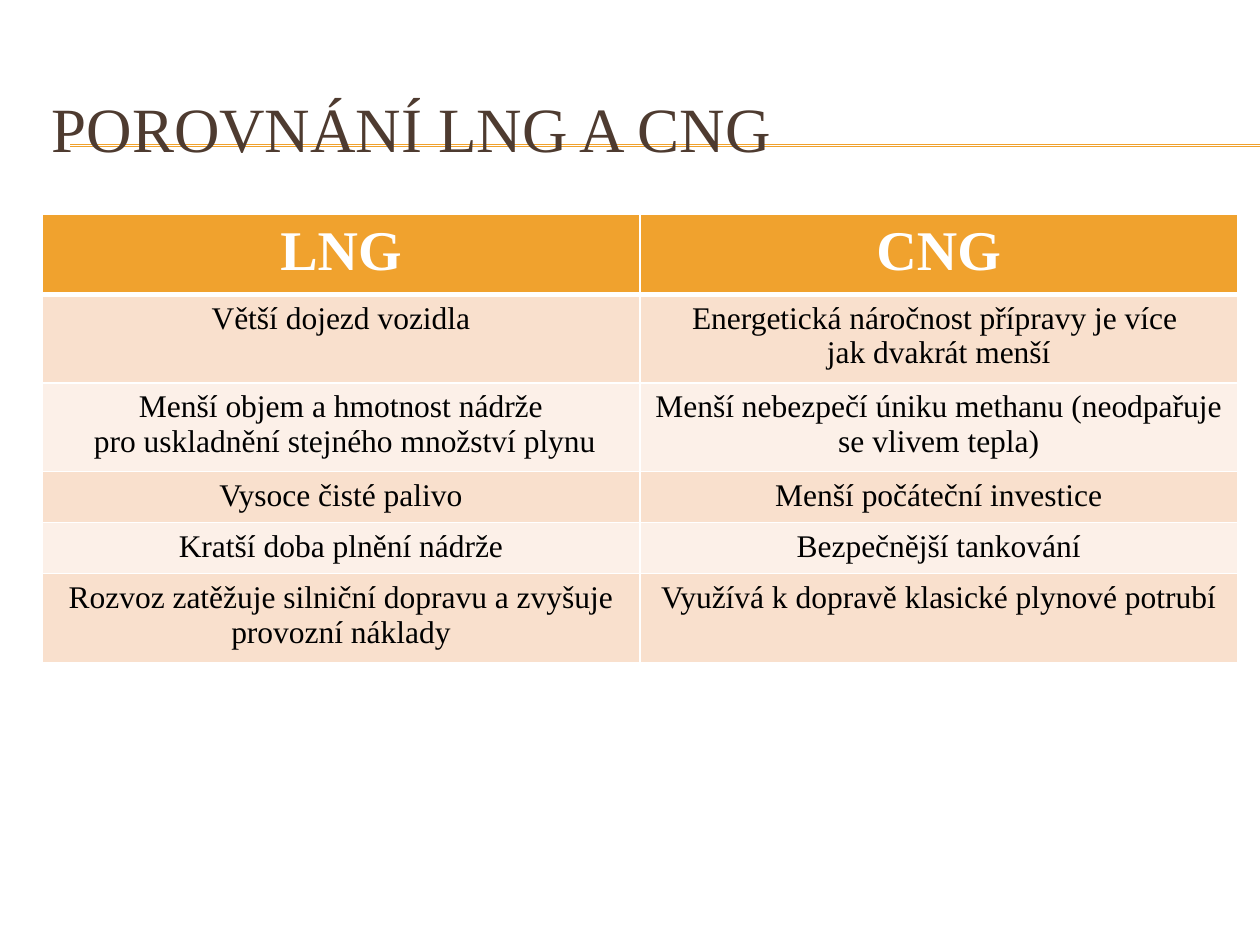
from dataclasses import dataclass

from lxml.etree import SubElement
from pptx import Presentation
from pptx.dml.color import RGBColor as RGB
from pptx.enum.shapes import MSO_CONNECTOR as Connector
from pptx.enum.text import MSO_ANCHOR as Anchor, PP_ALIGN as Align
from pptx.oxml.ns import qn
from pptx.util import Cm, Pt


@dataclass(frozen=True)
class Theme:
    font: str = "Times New Roman"
    accent: str = "F0A22E"
    title: str = "4E3B30"
    light: str = "FFFFFF"
    dark: str = "000000"
    bands: tuple = ("FCF0E8", "F9E0CD")
    title_size: int = 36
    header_size: int = 32
    body_size: int = 18


theme = Theme()


def style(paragraph, size, color, bold=False):
    font = paragraph.font
    font.name, font.size, font.bold = theme.font, Pt(size), bold
    font.color.rgb = RGB.from_string(color)


def add_border(cell, side, width):
    line = SubElement(cell._tc.get_or_add_tcPr(), qn(f"a:ln{side}"), w=str(Pt(width)))
    fill = SubElement(line, qn("a:solidFill"))
    SubElement(fill, qn("a:srgbClr"), val=theme.light)


presentation = Presentation()
presentation.slide_width, presentation.slide_height = Cm(25.4), Cm(19.05)
slide = presentation.slides.add_slide(presentation.slide_layouts[6])

for y in (2.92, 2.95):
    rule = slide.shapes.add_connector(Connector.STRAIGHT, Cm(1.42), Cm(y), Cm(25.4), Cm(y))
    rule.line.color.rgb = RGB.from_string(theme.accent)
    rule.line.width = Pt(0.75)
    SubElement(rule._element.spPr, qn("a:effectLst"))

title = slide.shapes.add_textbox(Cm(0.79), Cm(1.4), Cm(24.13), Cm(2.34))
title.text_frame.word_wrap = True
title.text_frame.vertical_anchor = Anchor.MIDDLE
title.text_frame.text = "POROVNÁNÍ LNG A CNG"
style(title.text_frame.paragraphs[0], theme.title_size, theme.title)

rows = [
    ("LNG", "CNG"),
    ("Větší dojezd vozidla", "Energetická náročnost přípravy je více \njak dvakrát menší"),
    (
        "Menší objem a hmotnost nádrže\n pro uskladnění stejného množství plynu",
        "Menší nebezpečí úniku methanu (neodpařuje se vlivem tepla)",
    ),
    ("Vysoce čisté palivo", "Menší počáteční investice"),
    ("Kratší doba plnění nádrže", "Bezpečnější tankování"),
    (
        "Rozvoz zatěžuje silniční dopravu a zvyšuje\nprovozní náklady",
        "Využívá k dopravě klasické plynové potrubí",
    ),
]
row_height = 1.03
table = slide.shapes.add_table(
    len(rows), 2, Cm(0.85), Cm(4.32), Cm(24.1), Cm(row_height * len(rows))
).table
table.horz_banding = False

for row_index, texts in enumerate(rows):
    is_header = row_index == 0
    for column_index, text in enumerate(texts):
        cell = table.cell(row_index, column_index)
        cell.margin_left = cell.margin_right = Cm(0.28)
        cell.margin_top = cell.margin_bottom = Cm(0.13)
        for side in "LRTB":
            at_header_edge = (row_index, side) in ((0, "B"), (1, "T"))
            add_border(cell, side, 3 if at_header_edge else 1)
        cell.fill.solid()
        color = theme.accent if is_header else theme.bands[row_index % 2]
        cell.fill.fore_color.rgb = RGB.from_string(color)
        cell.text = text
        for paragraph in cell.text_frame.paragraphs:
            paragraph.alignment = Align.CENTER
            if is_header:
                style(paragraph, theme.header_size, theme.light, bold=True)
            else:
                style(paragraph, theme.body_size, theme.dark)

presentation.save("out.pptx")
